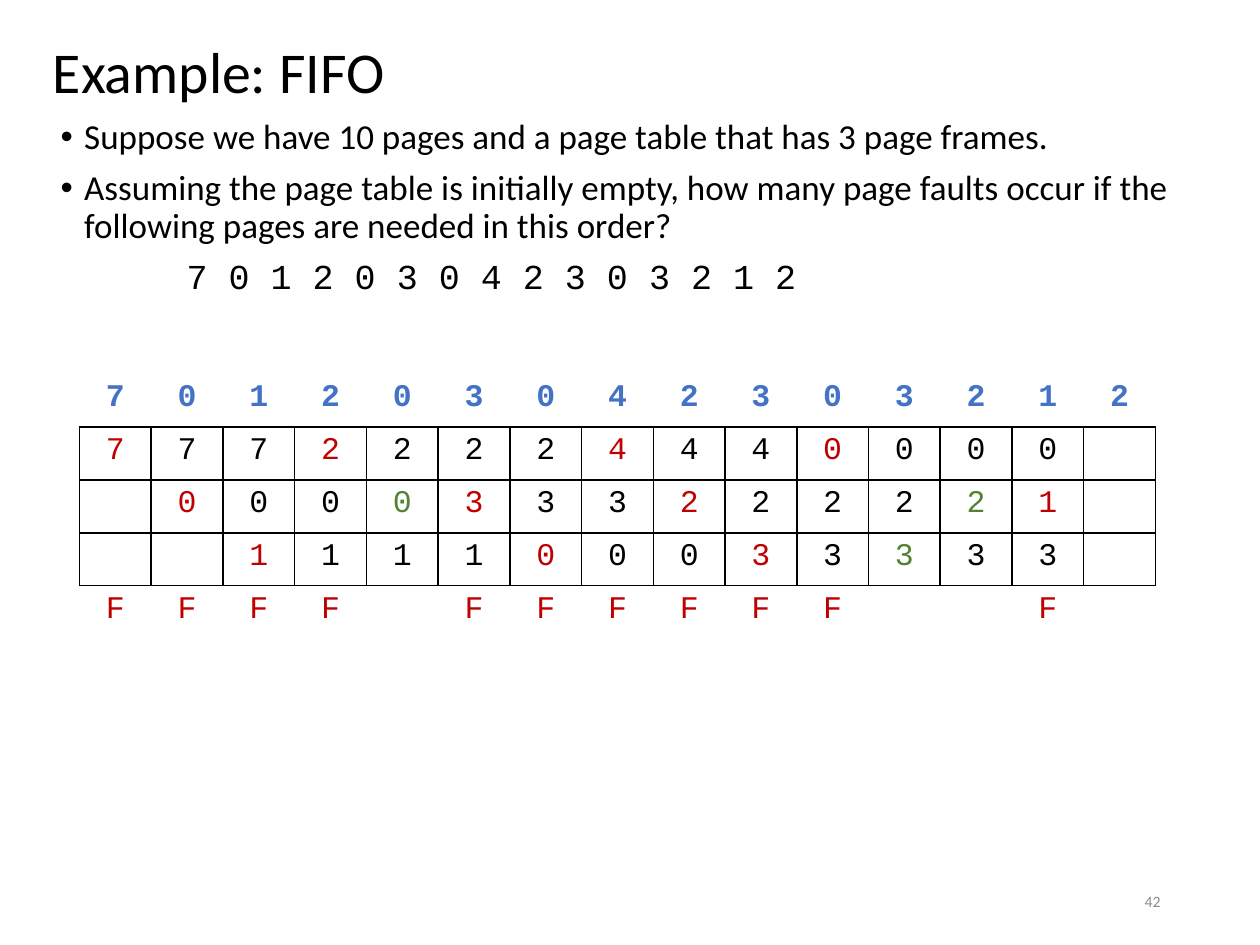
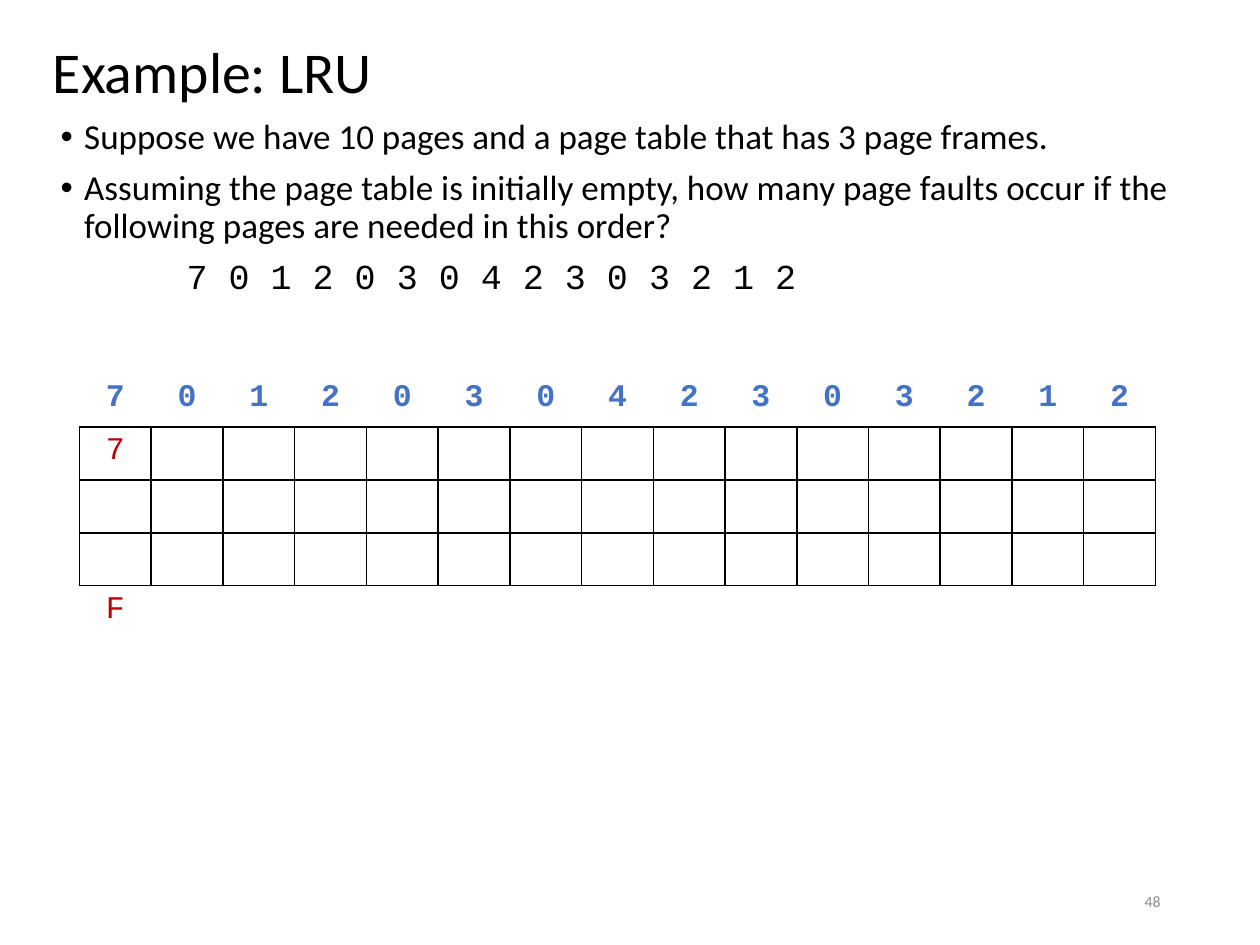
"""Build two page-replacement example slides, FIFO and LRU."""
from lxml import etree
from pptx import Presentation
from pptx.dml.color import RGBColor
from pptx.enum import text as t
from pptx.oxml import ns
from pptx.util import Pt

REFERENCES = "7 0 1 2 0 3 0 4 2 3 0 3 2 1 2"
BULLETS = [
    "Suppose we have 10 pages and a page table that has 3 page frames.",
    "Assuming the page table is initially empty, how many page faults occur "
    "if the following pages are needed in this order?",
]
# Frame entries: "!" marks a page fault, "+" a highlighted hit, "-" an empty cell.
SLIDES = [
    {"title": "Example: FIFO", "number": "42", "frames": [
        "7! 7 7 2! 2 2 2 4! 4 4 0! 0 0 0 -",
        "- 0! 0 0 0+ 3! 3 3 2! 2 2 2 2+ 1! -",
        "- - 1! 1 1 1 0! 0 0 3! 3 3+ 3 3 -"],
     "faults": "F F F F - F F F F F F - - F -"},
    {"title": "Example: LRU", "number": "48", "frames": ["7!", "-", "-"], "faults": "F"},
]

BLACK, BLUE, RED, GREEN, GREY = "000000", "4472C4", "C00000", "548235", "8C8C8C"
MARK_COLORS = {"!": RED, "+": GREEN}
SANS, MONO = "Calibri", "Courier New"
TITLE_BOX = (23, 7.2, 673, 71.3)
BODY_BOX = (27.4, 64.8, 669.6, 468)
NUMBER_BOX = (508.3, 500.4, 162, 28.8)
TABLE_LEFT, TABLE_TOP, COLUMN_WIDTH, ROW_HEIGHT = 45.4, 213.8, 41, 30.24


def color(value):
    """Turn a hex string into a colour."""
    return RGBColor.from_string(value)


def write(paragraph, content, size=18, font=SANS, fill=BLACK, bold=False,
          align=t.PP_ALIGN.LEFT, spacing=None, before=None):
    """Add formatted text to a paragraph."""
    run = paragraph.add_run()
    run.text = content
    run.font.size, run.font.name, run.font.bold = Pt(size), font, bold
    run.font.color.rgb = color(fill)
    paragraph.alignment = align
    if spacing is not None:
        paragraph.line_spacing = spacing
    if before is not None:
        paragraph.space_before = Pt(before)


def place(shape, box, anchor):
    """Move a text shape, fix its wrapping and return its text frame."""
    shape.left, shape.top, shape.width, shape.height = map(Pt, box)
    frame = shape.text_frame
    frame.word_wrap = True
    frame.auto_size = t.MSO_AUTO_SIZE.NONE
    frame.vertical_anchor = anchor
    return frame


def indent(paragraph, left, first, bullet=None):
    """Set the indents and the bullet of a paragraph."""
    properties = paragraph._p.get_or_add_pPr()
    properties.set("marL", str(Pt(left)))
    properties.set("indent", str(Pt(first)))
    if bullet:
        etree.SubElement(properties, ns.qn("a:buChar")).set("char", bullet)
    else:
        etree.SubElement(properties, ns.qn("a:buNone"))


def border(cell, visible_sides):
    """Draw the named sides of a cell and hide the others."""
    properties = cell._tc.get_or_add_tcPr()
    for side in "LRTB":
        line = etree.SubElement(properties, ns.qn(f"a:ln{side}"), w=str(Pt(1)))
        if side in visible_sides:
            solid = etree.SubElement(line, ns.qn("a:solidFill"))
            etree.SubElement(solid, ns.qn("a:srgbClr"), val=BLACK)
        else:
            etree.SubElement(line, ns.qn("a:noFill"))
    cell.fill.background()


def add_frame_table(slide, frames, faults):
    """Add the reference row, the frame grid and the fault row."""
    columns = len(REFERENCES.split())
    rows = [(REFERENCES, BLUE, True, "B"),
            *((frame, BLACK, False, "LRTB") for frame in frames),
            (faults, RED, False, "T")]
    table = slide.shapes.add_table(
        len(rows), columns, Pt(TABLE_LEFT), Pt(TABLE_TOP),
        Pt(COLUMN_WIDTH * columns), Pt(ROW_HEIGHT * len(rows))).table
    table.first_row = table.horz_banding = False
    for column in table.columns:
        column.width = Pt(COLUMN_WIDTH)
    for row, (entries, fill, bold, sides) in zip(table.rows, rows):
        row.height = Pt(ROW_HEIGHT)
        for cell in row.cells:
            border(cell, sides)
        for cell, entry in zip(row.cells, entries.split()):
            if entry != "-":
                write(cell.text_frame.paragraphs[0], entry[0], font=MONO, bold=bold,
                      fill=MARK_COLORS.get(entry[-1], fill), align=t.PP_ALIGN.CENTER)


def add_example(presentation, title, number, frames, faults):
    """Add one example slide."""
    slide = presentation.slides.add_slide(presentation.slide_layouts[1])
    heading = place(slide.shapes.title, TITLE_BOX, t.MSO_ANCHOR.MIDDLE)
    write(heading.paragraphs[0], title, size=33, spacing=0.9)

    body = place(slide.placeholders[1], BODY_BOX, t.MSO_ANCHOR.TOP)
    for index, content in enumerate([*BULLETS, REFERENCES]):
        paragraph = body.add_paragraph() if index else body.paragraphs[0]
        is_bullet = index < len(BULLETS)
        write(paragraph, content, size=20, font=SANS if is_bullet else MONO,
              spacing=0.9, before=7.5)
        if is_bullet:
            indent(paragraph, 13.5, -13.5, "•")
        else:
            indent(paragraph, 72, 0)

    number_box = slide.shapes.add_textbox(0, 0, 0, 0)
    footer = place(number_box, NUMBER_BOX, t.MSO_ANCHOR.MIDDLE)
    write(footer.paragraphs[0], number, size=9, fill=GREY, align=t.PP_ALIGN.RIGHT)
    add_frame_table(slide, frames, faults)


def main():
    """Build and save the presentation."""
    presentation = Presentation()
    presentation.slide_width, presentation.slide_height = Pt(720), Pt(540)
    for example in SLIDES:
        add_example(presentation, **example)
    presentation.save("out.pptx")


if __name__ == "__main__":
    main()
